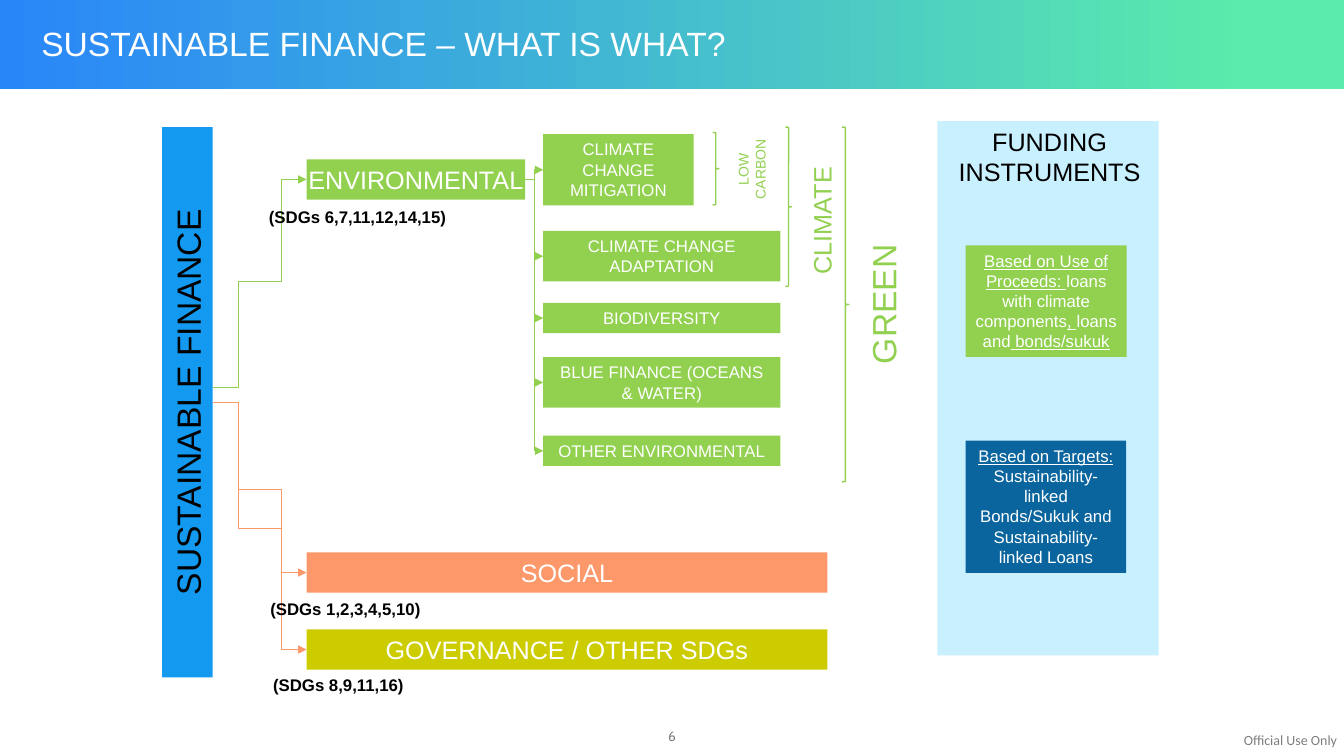
from dataclasses import dataclass
from typing import Optional

from lxml import etree
from pptx import Presentation
from pptx.dml.color import RGBColor
from pptx.enum.shapes import MSO_CONNECTOR, MSO_SHAPE
from pptx.enum.text import MSO_ANCHOR, PP_ALIGN
from pptx.oxml.ns import qn
from pptx.util import Pt

RECT, BRACE = MSO_SHAPE.RECTANGLE, MSO_SHAPE.RIGHT_BRACE
ELBOW = MSO_CONNECTOR.ELBOW
TOP, MIDDLE = MSO_ANCHOR.TOP, MSO_ANCHOR.MIDDLE
LEFT, CENTER = PP_ALIGN.LEFT, PP_ALIGN.CENTER


@dataclass(frozen=True)
class Theme:
    white: str = "FFFFFF"
    black: str = "000000"
    grey: str = "7F7F7F"
    green: str = "92D050"
    orange: str = "FD986A"
    olive: str = "CCCC00"
    blue: str = "139AF0"
    navy: str = "0A659E"
    pale: str = "C9F0FF"
    band_start: str = "5BEBAB"
    band_end: str = "2986F9"
    font: str = "Arial"
    title: float = 24
    heading: float = 18
    body: float = 12
    small: float = 10
    number: float = 9.7


T = Theme()


@dataclass(frozen=True)
class Box:
    """A block or label; paragraphs hold (text, underlined) runs."""
    x: float
    y: float
    w: float
    h: float
    paragraphs: tuple = ()
    size: float = T.body
    color: str = T.white
    fill: Optional[str] = None
    rotation: float = 0
    align: PP_ALIGN = CENTER
    anchor: MSO_ANCHOR = TOP
    bold: bool = False
    wrap: bool = True
    inset: bool = True
    font: str = T.font

    @property
    def mid_y(self) -> float:
        return self.y + self.h / 2


@dataclass(frozen=True)
class Elbow:
    start: tuple
    end: tuple
    color: str
    bends: tuple = ()


def plain(*lines: str) -> tuple:
    return tuple(((line, False),) for line in lines)


def rgb(value: str) -> RGBColor:
    return RGBColor.from_string(value)


def write(s, box: Box) -> None:
    tf = s.text_frame
    layout = {"word_wrap": box.wrap, "vertical_anchor": box.anchor}
    if not box.inset:
        sides = ("left", "right", "top", "bottom")
        layout.update({f"margin_{side}": 0 for side in sides})
    for name, value in layout.items():
        setattr(tf, name, value)
    for i, runs in enumerate(box.paragraphs):
        p = tf.paragraphs[0] if i == 0 else tf.add_paragraph()
        p.alignment = box.align
        for text, underlined in runs:
            r = p.add_run()
            r.text = text
            style = {"name": box.font, "size": Pt(box.size),
                     "bold": box.bold, "underline": underlined}
            for name, value in style.items():
                setattr(r.font, name, value)
            r.font.color.rgb = rgb(box.color)


def draw_box(shapes, box: Box) -> None:
    frame = [Pt(v) for v in (box.x, box.y, box.w, box.h)]
    if box.fill:
        s = shapes.add_shape(RECT, *frame)
        s.shadow.inherit = False
        s.fill.solid()
        s.fill.fore_color.rgb = rgb(box.fill)
        s.line.fill.background()
    else:
        s = shapes.add_textbox(*frame)
    s.rotation = box.rotation
    write(s, box)


def draw_band(shapes, width: float, height: float) -> None:
    s = shapes.add_shape(RECT, 0, 0, Pt(width), Pt(height))
    s.shadow.inherit = False
    s.line.fill.background()
    s.fill.gradient()
    s.fill.gradient_angle = 180
    stops = ((0.07, T.band_start), (1, T.band_end))
    for stop, (position, color) in zip(s.fill.gradient_stops, stops):
        stop.position = position
        stop.color.rgb = rgb(color)


def draw_brace(shapes, x: float, y: float, w: float, h: float) -> None:
    s = shapes.add_shape(BRACE, Pt(x), Pt(y), Pt(w), Pt(h))
    s.shadow.inherit = False
    s.fill.background()
    s.line.color.rgb = rgb(T.green)
    s.line.width = Pt(1)


def draw_elbow(shapes, elbow: Elbow) -> None:
    s = shapes.add_connector(ELBOW, *(Pt(v) for v in elbow.start + elbow.end))
    s.line.color.rgb = rgb(elbow.color)
    s.line.width = Pt(0.5)
    pr = s._element.spPr
    etree.SubElement(pr.find(qn("a:ln")), qn("a:tailEnd"), type="triangle")
    etree.SubElement(pr, qn("a:effectLst"))
    if elbow.bends:
        geom = pr.find(qn("a:prstGeom"))
        geom.set("prst", "bentConnector5")
        guides = geom.find(qn("a:avLst"))
        for i, bend in enumerate(elbow.bends, 1):
            etree.SubElement(guides, qn("a:gd"), name=f"adj{i}",
                             fmla=f"val {round(bend * 100000)}")


# Header and footer
WIDTH, HEIGHT = 960, 540
PAGE_TEXT = [
    Box(29.5, 14.4, 852, 33, plain("SUSTAINABLE FINANCE – WHAT IS WHAT?"), T.title,
        align=LEFT, anchor=MIDDLE, inset=False),
    Box(0, 512, WIDTH, 28, plain("6"), T.number, T.grey, anchor=MIDDLE,
        inset=False, font="Cabin"),
    Box(888.5, 522.7, 69, 12.2, plain("Official Use Only"), T.small, T.grey,
        align=LEFT, wrap=False, inset=False, font="Calibri"),
]

# Sustainable finance and its three pillars
ROOT = Box(-62.6, 269.3, 393, 36, plain("SUSTAINABLE FINANCE"), T.title, T.black,
           T.blue, rotation=270)
ENVIRONMENT = Box(219, 113.8, 156.2, 28.8, plain("ENVIRONMENTAL"), T.heading,
                  fill=T.green, wrap=False, inset=True)
SOCIAL = Box(219, 394.6, 372, 28.8, plain("SOCIAL"), T.heading, fill=T.orange)
GOVERNANCE = Box(219, 449.6, 372, 28.8, plain("GOVERNANCE / OTHER SDGs"),
                 T.heading, fill=T.olive)
PILLARS = [ROOT, ENVIRONMENT, SOCIAL, GOVERNANCE]
SDGS = [Box(x, y, 213, 21.6, plain(text), color=T.black, bold=True, align=LEFT)
        for x, y, text in ((185, 144, "(SDGs 6,7,11,12,14,15)"),
                           (186, 424, "(SDGs 1,2,3,4,5,10)"),
                           (188, 478.4, "(SDGs 8,9,11,16)"))]

# Environmental topics: top, width, height, text
TOPICS = [Box(388, y, w, h, plain(text), fill=T.green) for y, w, h, text in (
    (95.8, 107.5, 51, "CLIMATE CHANGE MITIGATION"),
    (165, 169.5, 36, "CLIMATE CHANGE ADAPTATION"),
    (216.4, 169.5, 21.6, "BIODIVERSITY"),
    (255.2, 169.5, 36, "BLUE FINANCE (OCEANS & WATER)"),
    (311.2, 169.5, 21.6, "OTHER ENVIRONMENTAL"))]

# Scope braces and their upright labels
BRACES = [(509, 94.6, 4.5, 51.8), (561, 90.8, 4.5, 113.8), (601.4, 90.8, 5, 253.4)]
SCOPES = [Box(x, y, w, h, plain(text), size, T.green, rotation=270)
          for x, y, w, h, text, size in (
              (503.3, 105.1, 67.7, 31.7, "LOW CARBON", T.small),
              (539.3, 144, 93.6, 27.4, "CLIMATE", T.heading),
              (573.1, 199.4, 115.2, 36, "GREEN", T.title))]

# Funding instruments panel
FUNDING = [
    Box(669.5, 86.6, 158.2, 381.6, fill=T.pale),
    Box(669.5, 86.6, 160.5, 44, plain("FUNDING", "INSTRUMENTS"), T.heading, T.black),
    Box(689.8, 175.3, 115, 79.7, ((
        ("Based on Use of Proceeds: ", True), ("loans with climate components", False),
        (", ", True), ("loans and", False), (" bonds/sukuk", True)),), fill=T.green),
    Box(689.8, 314.8, 114.6, 94.5, ((
        ("Based on Targets: ", True),
        ("Sustainability-linked Bonds/Sukuk and Sustainability-linked Loans", False)),),
        fill=T.navy),
]

# Arrows from the root to the pillars and from the environment to its topics
BENDS = (0.27, 0.51, 0.73)
ELBOWS = [Elbow((152, y), (pillar.x, pillar.mid_y), color, BENDS)
          for y, pillar, color in ((276.5, ENVIRONMENT, T.green),
                                   (287.3, SOCIAL, T.orange),
                                   (287.3, GOVERNANCE, T.orange))]
ELBOWS += [Elbow((ENVIRONMENT.x + ENVIRONMENT.w, ENVIRONMENT.mid_y),
                 (topic.x, topic.mid_y), T.green) for topic in TOPICS]


def main() -> None:
    prs = Presentation()
    prs.slide_width, prs.slide_height = Pt(WIDTH), Pt(HEIGHT)
    shapes = prs.slides.add_slide(prs.slide_layouts[6]).shapes
    draw_band(shapes, WIDTH, 63.4)
    for box in PAGE_TEXT + PILLARS + TOPICS + SCOPES + FUNDING:
        draw_box(shapes, box)
    for brace in BRACES:
        draw_brace(shapes, *brace)
    for elbow in ELBOWS:
        draw_elbow(shapes, elbow)
    for label in SDGS:
        draw_box(shapes, label)
    prs.save("out.pptx")


if __name__ == "__main__":
    main()
